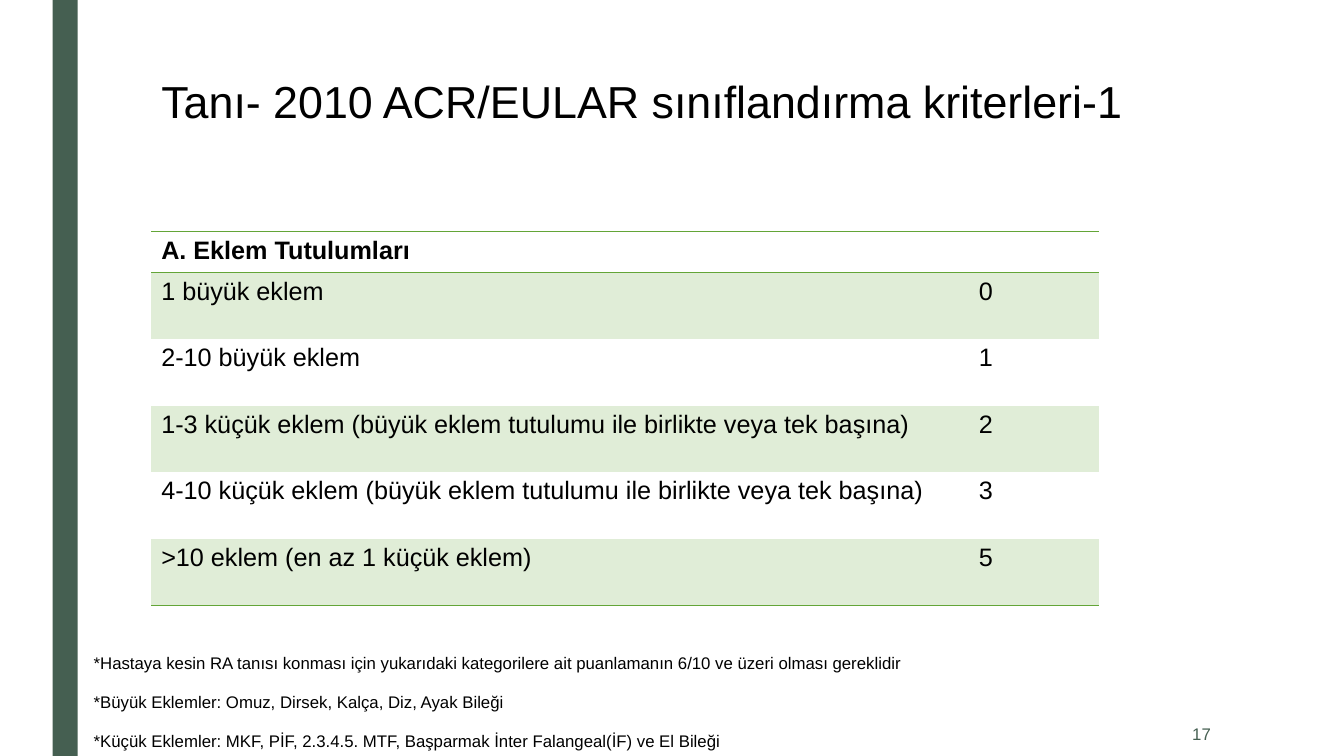
import pptx
import pptx.util
import pptx.dml.color
import pptx.enum.shapes
import pptx.enum.text
import pptx.oxml
import pptx.oxml.ns

Pt = pptx.util.Pt
ALIGN = pptx.enum.text.PP_ALIGN
ANCHOR = pptx.enum.text.MSO_ANCHOR
FONT = "Arial"
COLORS = {"bar": "455F51", "rule": "63A537", "band": "E0EDD7", "text": "000000"}

HEADING = "A. Eklem Tutulumları"
CRITERIA = [
    ("1 büyük eklem", "0"),
    ("2-10 büyük eklem", "1"),
    ("1-3 küçük eklem (büyük eklem tutulumu ile birlikte veya tek başına)", "2"),
    ("4-10 küçük eklem (büyük eklem tutulumu ile birlikte veya tek başına)", "3"),
    (">10 eklem (en az 1 küçük eklem)", "5"),
]
FOOTNOTES = [
    "*Hastaya kesin RA tanısı konması için yukarıdaki kategorilere ait puanlamanın 6/10 ve üzeri olması gereklidir",
    "*Büyük Eklemler: Omuz, Dirsek, Kalça, Diz, Ayak Bileği",
    "*Küçük Eklemler: MKF, PİF, 2.3.4.5. MTF, Başparmak İnter Falangeal(İF) ve El Bileği",
]


def rgb(name):
    return pptx.dml.color.RGBColor.from_string(COLORS[name])


def write(tf, text, size, color="text", bold=False, align=ALIGN.LEFT):
    tf.text = text
    p = tf.paragraphs[0]
    p.alignment = align
    for r in p.runs:
        r.font.name = FONT
        r.font.size = Pt(size)
        r.font.bold = bold
        r.font.color.rgb = rgb(color)


def set_borders(cell, ruled):
    """Rule the sides named in ruled (T, B) and clear the others."""
    tcPr = cell._tc.get_or_add_tcPr()
    ns = pptx.oxml.ns.nsdecls("a")
    for i, side in enumerate("LRTB"):
        paint = "<a:noFill/>"
        if side in ruled:
            paint = f'<a:solidFill><a:srgbClr val="{COLORS["rule"]}"/></a:solidFill>'
        ln = pptx.oxml.parse_xml(f'<a:ln{side} {ns} w="12700">{paint}</a:ln{side}>')
        tcPr.insert(i, ln)


def add_side_bar(slide, x, y, w, h):
    sp = slide.shapes.add_shape(
        pptx.enum.shapes.MSO_SHAPE.RECTANGLE, Pt(x), Pt(y), Pt(w), Pt(h))
    sp.shadow.inherit = False
    sp.fill.solid()
    sp.fill.fore_color.rgb = rgb("bar")
    sp.line.fill.background()


def add_title(slide, x, y, w, h):
    title = slide.shapes.title
    title.left, title.top, title.width, title.height = Pt(x), Pt(y), Pt(w), Pt(h)
    tf = title.text_frame
    tf.word_wrap = True
    tf.vertical_anchor = ANCHOR.TOP
    write(tf, "Tanı- 2010 ACR/EULAR sınıflandırma kriterleri-1", 32)
    tf.paragraphs[0].line_spacing = 0.89


def add_criteria_table(slide, x, y, w, h, score_w=93, head_h=29.2):
    rows = [(HEADING, "")] + CRITERIA
    last = len(rows) - 1
    table = slide.shapes.add_table(len(rows), 2, Pt(x), Pt(y), Pt(w), Pt(h)).table
    table.first_row = table.horz_banding = False
    table.columns[0].width = Pt(w - score_w)
    table.columns[1].width = Pt(score_w)
    for i, row in enumerate(rows):
        table.rows[i].height = Pt(head_h if i == 0 else (h - head_h) / last)
        ruled = {0: "TB", 1: "T", last: "B"}.get(i, "")
        for j, text in enumerate(row):
            cell = table.cell(i, j)
            write(cell.text_frame, text, 18, bold=i == 0)
            if i % 2:
                cell.fill.solid()
                cell.fill.fore_color.rgb = rgb("band")
            else:
                cell.fill.background()
            set_borders(cell, ruled)


def add_text(slide, x, y, w, h, text, color="text", align=ALIGN.LEFT, anchor=ANCHOR.TOP):
    tf = slide.shapes.add_textbox(Pt(x), Pt(y), Pt(w), Pt(h)).text_frame
    tf.word_wrap = True
    tf.vertical_anchor = anchor
    write(tf, text, 12, color, align=align)


def add_footnotes(slide, x, y, w, pitch):
    for i, note in enumerate(FOOTNOTES):
        add_text(slide, x, y + i * pitch, w, 21.6, note)


def main():
    prs = pptx.Presentation()
    prs.slide_width, prs.slide_height = Pt(960), Pt(540)
    slide = prs.slides.add_slide(prs.slide_layouts[5])
    add_side_bar(slide, 37.5, 0, 18, 540)
    add_title(slide, 108, 54, 756, 116.6)
    add_criteria_table(slide, 108, 165.4, 677, 267)
    add_footnotes(slide, 59.8, 463, 605, 27.6)
    add_text(slide, 746, 508.3, 126, 31.7, "17", "bar", ALIGN.RIGHT, ANCHOR.MIDDLE)
    prs.save("out.pptx")


if __name__ == "__main__":
    main()
